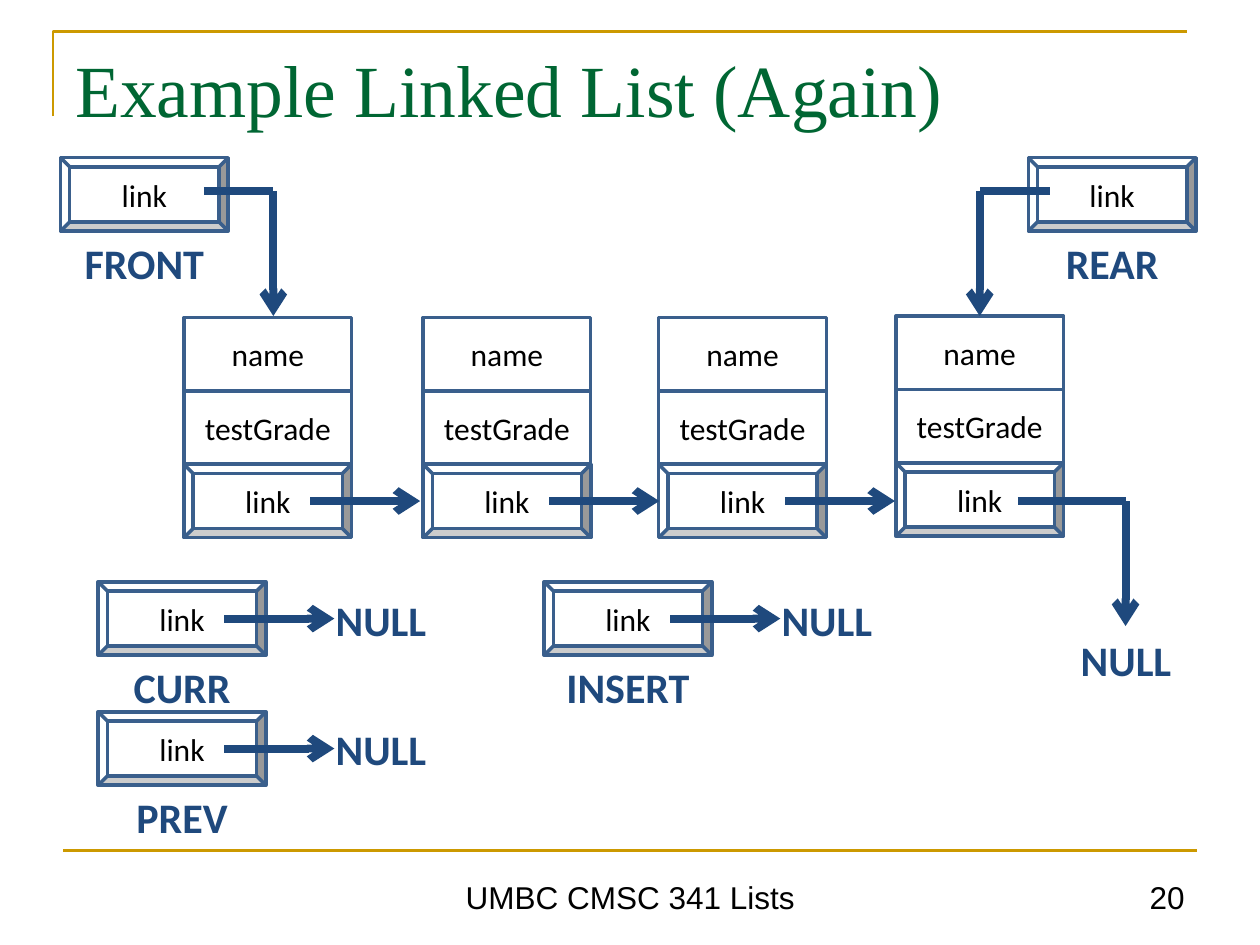
from dataclasses import dataclass
from typing import Optional

from lxml import etree
from pptx import Presentation
from pptx.dml.color import RGBColor
from pptx.enum import shapes, text
from pptx.oxml import ns
from pptx.util import Cm, Pt

COLOURS = {
    "gold": "CC9900",
    "green": "006633",
    "navy": "1F497D",
    "outline": "3A5F8C",
    "white": "FFFFFF",
    "black": "000000",
}
CELL_WIDTH, CELL_HEIGHT = 3.38, 1.48
LABEL_WIDTH, LABEL_HEIGHT = 3.94, 1.3
ARROW_START, ARROW_LENGTH = 2.54, 2.22
ALIGN = text.PP_ALIGN
ANCHOR = text.MSO_ANCHOR


@dataclass
class Style:
    font: str
    size: float
    colour: str
    bold: bool = False
    align: ALIGN = ALIGN.CENTER
    anchor: ANCHOR = ANCHOR.TOP


@dataclass
class Node:
    left: float
    top: float
    has_arrow: bool = True


@dataclass
class Pointer:
    name: str
    left: float
    top: float
    is_null: bool = False


@dataclass
class Elbow:
    start: float
    corner: float
    top: float
    bottom: float
    target: Optional[int] = None


TITLE = Style("Times New Roman", 42, "green", align=ALIGN.LEFT)
FOOTER = Style("Arial", 18, "black", anchor=ANCHOR.BOTTOM)
PAGE_NUMBER = Style("Arial", 18, "black", align=ALIGN.RIGHT, anchor=ANCHOR.BOTTOM)
FIELD = Style("Calibri", 18, "black", anchor=ANCHOR.MIDDLE)
LABEL = Style("Calibri", 24, "navy", bold=True)

NODES = [
    Node(3.71, 6.4),
    Node(8.53, 6.4),
    Node(13.28, 6.4),
    Node(18.06, 6.37, has_arrow=False),
]
POINTERS = [
    Pointer("FRONT", 1.22, 3.18),
    Pointer("REAR", 20.73, 3.18),
    Pointer("CURR", 1.98, 11.73, is_null=True),
    Pointer("PREV", 1.98, 14.35, is_null=True),
    Pointer("INSERT", 10.97, 11.73, is_null=True),
]
ELBOWS = [
    Elbow(4.11, 5.51, 3.85, 6.37),
    Elbow(21.16, 19.75, 3.85, 6.37, target=3),
    Elbow(20.52, 22.69, 10.1, 12.62),
]


def rgb(name: str) -> RGBColor:
    return RGBColor.from_string(COLOURS[name])


def write(shape, words: str, style: Style) -> None:
    frame = shape.text_frame
    frame.text = words
    frame.word_wrap = True
    frame.vertical_anchor = style.anchor
    para = frame.paragraphs[0]
    para.alignment = style.align
    font = para.runs[0].font
    font.name, font.size, font.bold = style.font, Pt(style.size), style.bold
    font.color.rgb = rgb(style.colour)


def add_text(page, words: str, left: float, top: float, width: float, height: float, style: Style):
    box = page.shapes.add_textbox(Cm(left), Cm(top), Cm(width), Cm(height))
    write(box, words, style)
    return box


def add_label(page, words: str, left: float, top: float) -> None:
    box = add_text(page, words, left, top, LABEL_WIDTH, LABEL_HEIGHT, LABEL)
    box.text_frame.auto_size = text.MSO_AUTO_SIZE.SHAPE_TO_FIT_TEXT


def add_cell(parent, words: str, left: float, top: float, preset=shapes.MSO_SHAPE.RECTANGLE):
    cell = parent.shapes.add_shape(preset, Cm(left), Cm(top), Cm(CELL_WIDTH), Cm(CELL_HEIGHT))
    cell.shadow.inherit = False
    cell.fill.solid()
    cell.fill.fore_color.rgb = rgb("white")
    cell.line.color.rgb = rgb("outline")
    cell.line.width = Pt(2)
    write(cell, words, FIELD)
    return cell


def add_link(parent, left: float, top: float) -> None:
    add_cell(parent, "link", left, top, shapes.MSO_SHAPE.BEVEL)


def add_line(parent, x1: float, y1: float, x2: float, y2: float,
             colour: str = "navy", width: float = 4.5, arrow: bool = False):
    line = parent.shapes.add_connector(
        shapes.MSO_CONNECTOR.STRAIGHT, Cm(x1), Cm(y1), Cm(x2), Cm(y2))
    line.line.color.rgb = rgb(colour)
    line.line.width = Pt(width)
    if arrow:
        etree.SubElement(line.line._get_or_add_ln(), ns.qn("a:tailEnd"), type="arrow")
    etree.SubElement(line._element.spPr, ns.qn("a:effectLst"))
    return line


def add_link_arrow(page, left: float, top: float) -> None:
    start, middle = left + ARROW_START, top + CELL_HEIGHT / 2
    add_line(page, start, middle, start + ARROW_LENGTH, middle, arrow=True)


def add_node(page, node: Node):
    group = page.shapes.add_group_shape()
    add_link(group, node.left, node.top + 2 * CELL_HEIGHT)
    add_cell(group, "testGrade", node.left, node.top + CELL_HEIGHT)
    return add_cell(group, "name", node.left, node.top)


def add_pointer(page, pointer: Pointer) -> None:
    add_link(page, pointer.left, pointer.top)
    label_left = pointer.left + (CELL_WIDTH - LABEL_WIDTH) / 2
    add_label(page, pointer.name, label_left, pointer.top + CELL_HEIGHT)
    if pointer.is_null:
        add_link_arrow(page, pointer.left, pointer.top)
        add_label(page, "NULL", pointer.left + 3.73, pointer.top + 0.12)


def add_elbow(page, elbow: Elbow, heads: list) -> None:
    group = page.shapes.add_group_shape()
    drop = add_line(group, elbow.corner, elbow.top, elbow.corner, elbow.bottom, arrow=True)
    add_line(group, elbow.start, elbow.top, elbow.corner, elbow.top)
    if elbow.target is not None:
        drop.end_connect(heads[elbow.target], 0)


def add_frame(page) -> None:
    builder = page.shapes.build_freeform(Cm(1.07), Cm(2.34))
    builder.add_line_segments([(Cm(1.07), Cm(0.64)), (Cm(23.93), Cm(0.64))], close=False)
    corner = builder.convert_to_shape()
    corner.shadow.inherit = False
    corner.fill.background()
    corner.line.color.rgb = rgb("gold")
    corner.line.width = Pt(1.5)
    add_line(page, 1.27, 17.15, 24.13, 17.15, "gold", 1.5)


def main() -> None:
    deck = Presentation()
    deck.slide_width, deck.slide_height = Cm(25.4), Cm(19.05)
    page = deck.slides.add_slide(deck.slide_layouts[6])
    add_frame(page)
    add_text(page, "Example Linked List (Again)", 1.27, 0.76, 22.83, 2.82, TITLE)
    add_text(page, "UMBC CMSC 341 Lists", 4.45, 17.35, 16.51, 1.24, FOOTER)
    add_text(page, "20", 18.21, 17.35, 5.92, 1.24, PAGE_NUMBER)
    heads = [add_node(page, node) for node in NODES]
    for node in NODES:
        if node.has_arrow:
            add_link_arrow(page, node.left, node.top + 2 * CELL_HEIGHT)
    for pointer in POINTERS:
        add_pointer(page, pointer)
    for elbow in ELBOWS:
        add_elbow(page, elbow, heads)
    add_label(page, "NULL", 20.73, 12.67)
    deck.save("out.pptx")


if __name__ == "__main__":
    main()
